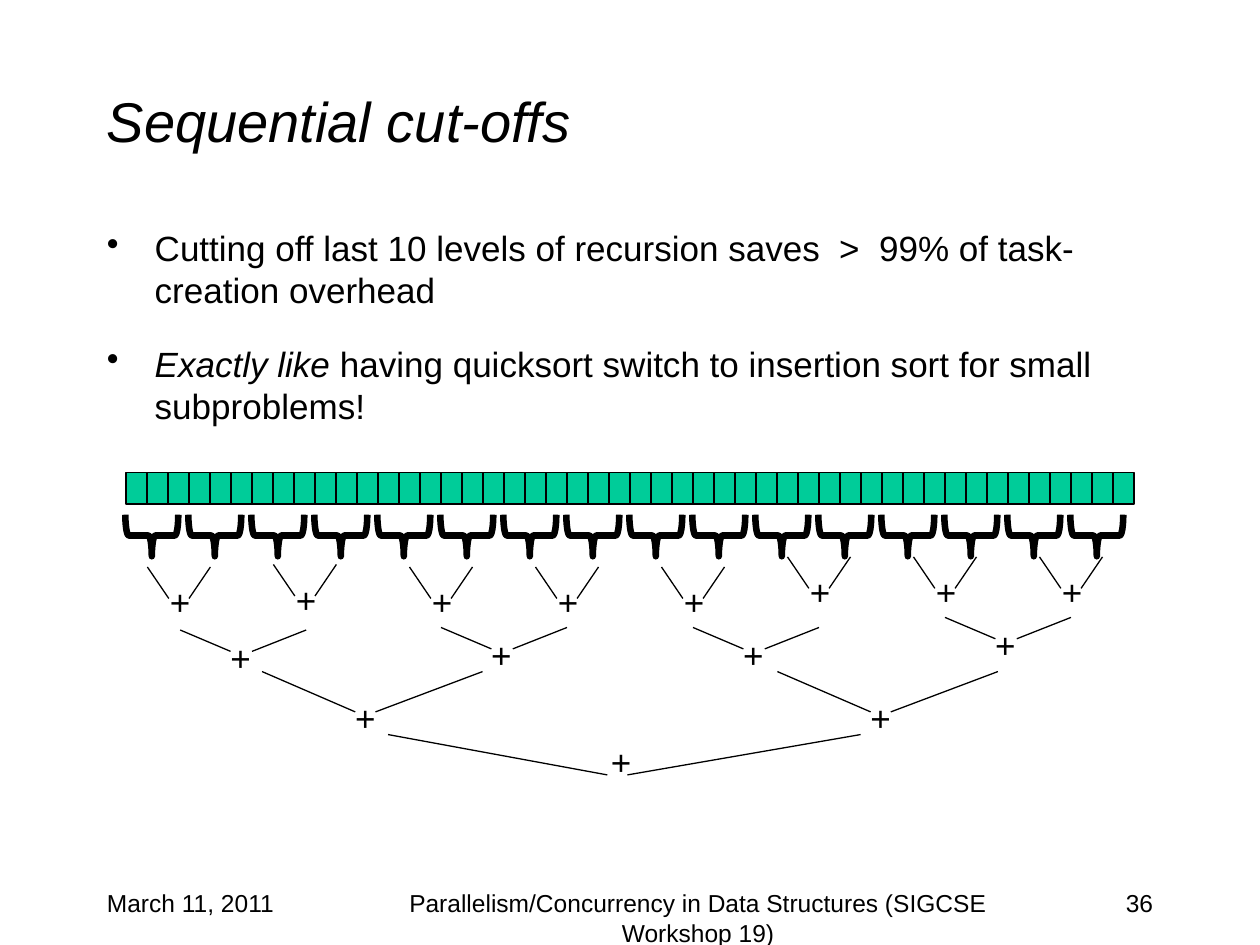
from dataclasses import dataclass

from lxml import etree
from pptx import Presentation
from pptx.dml.color import RGBColor
from pptx.enum.shapes import MSO_CONNECTOR, MSO_SHAPE
from pptx.enum.text import MSO_ANCHOR, PP_ALIGN
from pptx.oxml.ns import qn
from pptx.util import Inches, Pt

BLACK = RGBColor(0x00, 0x00, 0x00)
GREEN = RGBColor(0x00, 0xCC, 0x99)
FONT = "Arial"
LEFT, CENTER, RIGHT = PP_ALIGN.LEFT, PP_ALIGN.CENTER, PP_ALIGN.RIGHT
TOP, MIDDLE = MSO_ANCHOR.TOP, MSO_ANCHOR.MIDDLE
RECTANGLE, LEFT_BRACE = MSO_SHAPE.RECTANGLE, MSO_SHAPE.LEFT_BRACE
STRAIGHT = MSO_CONNECTOR.STRAIGHT

ARRAY_LEFT, ARRAY_TOP = 1, 3.75
CELL_COUNT, CELL_WIDTH, CELL_HEIGHT = 48, 1 / 6, 0.25
BRACE_COUNT, BRACE_PITCH = 16, 0.5


@dataclass
class TextBlock:
    text: str
    left: float
    top: float
    width: float
    height: float
    size: int
    align: PP_ALIGN = LEFT
    anchor: MSO_ANCHOR = TOP
    italic: bool = False
    wrap: bool = True


@dataclass
class TreeLevel:
    """Sums of one level; offsets count from the start of the left branch."""
    span: float
    join_left: float
    join_right: float
    drop: float
    plus_dx: float
    plus_dy: float
    starts: list[tuple[float, float]]


TEXTS = [
    TextBlock("Sequential cut-offs", 0.75, 0.33, 8.5, 1.25, 32, anchor=MIDDLE, italic=True),
    TextBlock("March 11, 2011", 0.75, 7, 2.08, 0.5, 14),
    TextBlock("36", 7.17, 7, 2.08, 0.5, 14, RIGHT),
    TextBlock("Parallelism/Concurrency in Data Structures (SIGCSE Workshop 19)",
              2.75, 7, 5.58, 0.5, 14, CENTER),
]

# Each bullet is a list of (text, italic) runs.
BULLETS = [
    [("Cutting off last 10 levels of recursion saves  >  99% of task-creation overhead", False)],
    [("Exactly like", True),
     (" having quicksort switch to insertion sort for small subproblems!", False)],
]
BULLET_SPACING = [4, 18]

LEVELS = [
    TreeLevel(0.5, 0.17, 0.33, 0.25, 0.08, 0.06,
              [(1.17, 4.5), (2.17, 4.48), (3.25, 4.5), (4.25, 4.5), (5.25, 4.5),
               (6.25, 4.42), (7.25, 4.42), (8.25, 4.42)]),
    TreeLevel(1, 0.4, 0.57, 0.17, 0.3, 0,
              [(1.43, 5), (3.5, 4.98), (5.5, 4.98), (7.5, 4.9)]),
    TreeLevel(1.75, 0.74, 0.9, 0.32, 0.64, 0.15, [(2.08, 5.33), (6.17, 5.33)]),
    TreeLevel(3.75, 1.74, 1.9, 0.32, 1.67, 0, [(3.08, 5.83)]),
]


def add_text(slide, block: TextBlock):
    box = slide.shapes.add_textbox(Inches(block.left), Inches(block.top),
                                   Inches(block.width), Inches(block.height))
    frame = box.text_frame
    frame.word_wrap = block.wrap
    frame.vertical_anchor = block.anchor
    paragraph = frame.paragraphs[0]
    paragraph.text = block.text
    paragraph.alignment = block.align
    style_font(paragraph, block.size)
    paragraph.font.italic = block.italic


def style_font(paragraph, size: int):
    paragraph.font.name = FONT
    paragraph.font.size = Pt(size)
    paragraph.font.color.rgb = BLACK


def add_bullets(slide):
    box = slide.shapes.add_textbox(Inches(0.75), Inches(1.75), Inches(8.5), Inches(1.85))
    frame = box.text_frame
    frame.word_wrap = True
    for index, (runs, spacing) in enumerate(zip(BULLETS, BULLET_SPACING)):
        paragraph = frame.add_paragraph() if index else frame.paragraphs[0]
        paragraph.space_before = Pt(spacing)
        style_font(paragraph, 20)
        for text, italic in runs:
            run = paragraph.add_run()
            run.text = text
            run.font.italic = italic
        properties = paragraph._p.get_or_add_pPr()
        properties.set("marL", str(Inches(0.38)))
        properties.set("indent", str(Inches(-0.38)))
        bullet = etree.Element(qn("a:buChar"), char="•")
        properties.find(qn("a:defRPr")).addprevious(bullet)


def add_outline(slide, kind: MSO_SHAPE, left: float, top: float,
                width: float, height: float, line_width: float):
    """Add a preset shape with a black line and no shadow."""
    shape = slide.shapes.add_shape(kind, Inches(left), Inches(top),
                                   Inches(width), Inches(height))
    shape.shadow.inherit = False
    shape.line.color.rgb = BLACK
    shape.line.width = Pt(line_width)
    return shape


def add_array(slide):
    for index in range(CELL_COUNT):
        cell = add_outline(slide, RECTANGLE, ARRAY_LEFT + index * CELL_WIDTH, ARRAY_TOP,
                           CELL_WIDTH, CELL_HEIGHT, 0.75)
        cell.fill.solid()
        cell.fill.fore_color.rgb = GREEN


def add_braces(slide):
    for index in range(BRACE_COUNT):
        brace = add_outline(slide, LEFT_BRACE, 1.04 + index * BRACE_PITCH, 4.04,
                            0.33, 0.42, 3.75)
        brace.rotation = 270
        brace.fill.background()


def add_branch(slide, x1: float, y1: float, x2: float, y2: float):
    branch = slide.shapes.add_connector(STRAIGHT, Inches(x1), Inches(y1),
                                        Inches(x2), Inches(y2))
    branch.line.color.rgb = BLACK
    branch.line.width = Pt(0.75)
    etree.SubElement(branch._element.spPr, qn("a:effectLst"))


def add_level(slide, level: TreeLevel):
    for x, y in level.starts:
        bottom = y + level.drop
        add_branch(slide, x, y, x + level.join_left, bottom)
        add_branch(slide, x + level.span, y, x + level.join_right, bottom)
        add_text(slide, TextBlock("+", x + level.plus_dx, y + level.plus_dy,
                                  0.36, 0.44, 20, wrap=False))


def main():
    presentation = Presentation()
    presentation.slide_width = Inches(10)
    presentation.slide_height = Inches(7.5)
    slide = presentation.slides.add_slide(presentation.slide_layouts[6])
    for block in TEXTS:
        add_text(slide, block)
    add_bullets(slide)
    add_array(slide)
    add_braces(slide)
    for level in LEVELS:
        add_level(slide, level)
    presentation.save("out.pptx")


if __name__ == "__main__":
    main()
